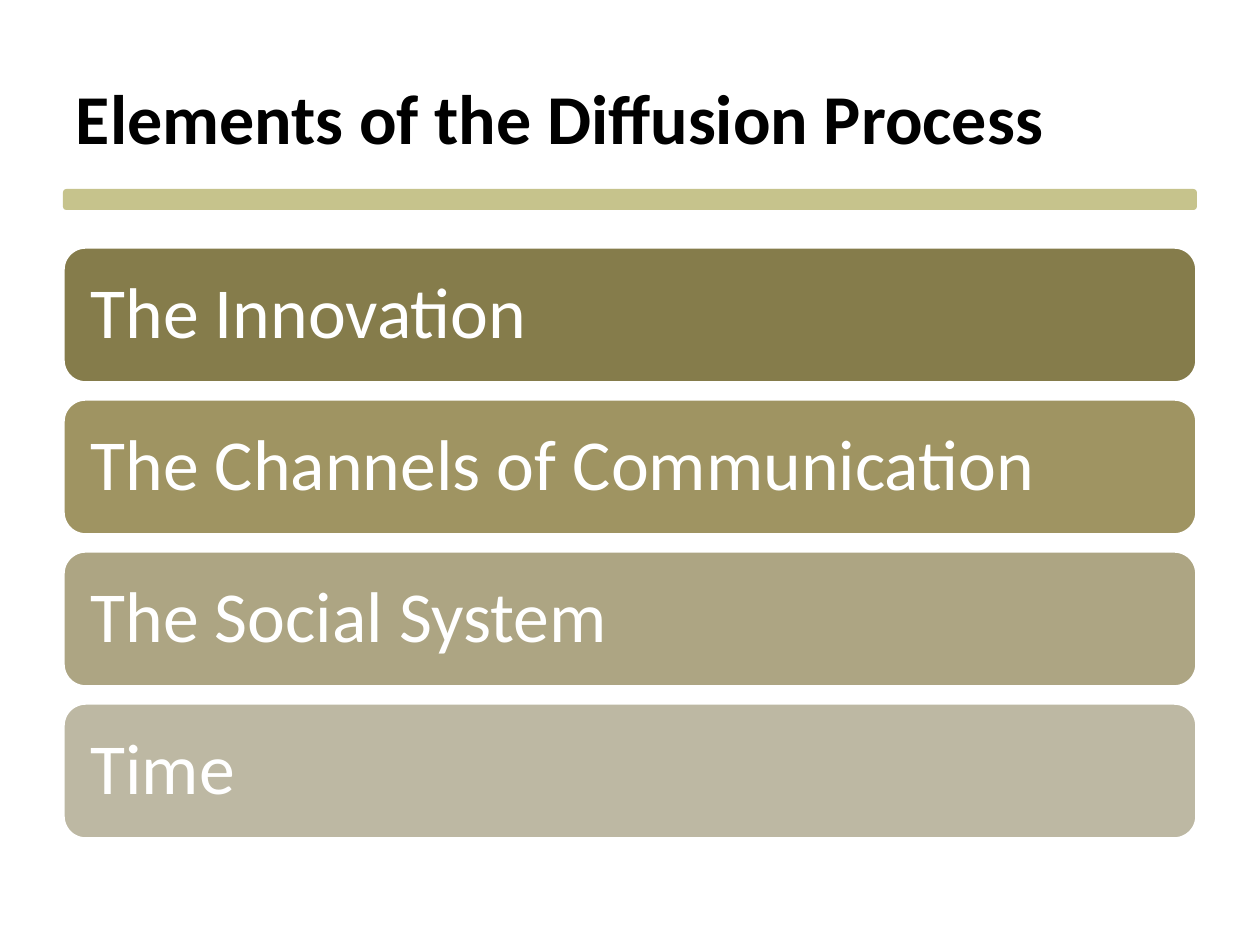
import dataclasses

import pptx
import pptx.dml.color
import pptx.enum.shapes
import pptx.enum.text
import pptx.util

SCALE = 914400 / 126  # EMU per px
FONT = "Calibri"
WHITE = "FFFFFF"
LEFT, WIDTH = 63, 1134
TOP, HEIGHT, PITCH = 247, 136, 152


@dataclasses.dataclass
class Bar:
    text: str
    fill: str


BARS = [
    Bar("The Innovation", "857C4B"),
    Bar("The Channels of Communication", "9F9462"),
    Bar("The Social System", "ADA583"),
    Bar("Time", "BDB8A3"),
]


def px(n: int) -> pptx.util.Emu:
    return pptx.util.Emu(round(n * SCALE))


def color(code: str) -> pptx.dml.color.RGBColor:
    return pptx.dml.color.RGBColor.from_string(code)


def write(shape, text: str, *, size: int, ink: str, bold: bool = False,
          inset: tuple[int, int] = (13, 6), space: float = 1.0) -> None:
    """Set left-aligned, middle-anchored text; inset is (sides, top and bottom)."""
    frame = shape.text_frame
    frame.word_wrap = True
    frame.auto_size = pptx.enum.text.MSO_AUTO_SIZE.NONE
    frame.vertical_anchor = pptx.enum.text.MSO_ANCHOR.MIDDLE
    frame.margin_left = frame.margin_right = px(inset[0])
    frame.margin_top = frame.margin_bottom = px(inset[1])
    para = frame.paragraphs[0]
    para.alignment = pptx.enum.text.PP_ALIGN.LEFT
    para.line_spacing = space
    run = para.add_run()
    run.text = text
    run.font.name = FONT
    run.font.size = pptx.util.Pt(size)
    run.font.bold = bold
    run.font.color.rgb = color(ink)


def add_box(slide, top: int, height: int, fill: str, line: str | None = None):
    kind = pptx.enum.shapes.MSO_SHAPE.ROUNDED_RECTANGLE
    box = slide.shapes.add_shape(kind, px(LEFT), px(top), px(WIDTH), px(height))
    box.shadow.inherit = False
    box.fill.solid()
    box.fill.fore_color.rgb = color(fill)
    if line:
        box.line.color.rgb = color(line)
        box.line.width = pptx.util.Pt(2)
    else:
        box.line.fill.background()
    return box


def add_title(slide, text: str) -> None:
    title = slide.shapes.title
    title.left, title.top = px(LEFT), px(38)
    title.width, title.height = px(WIDTH), px(157)
    write(title, text, size=40, ink="000000", bold=True)


def add_bar(slide, bar: Bar, top: int) -> None:
    box = add_box(slide, top, HEIGHT, bar.fill, WHITE)
    write(box, bar.text, size=41, ink=WHITE, inset=(21, 21), space=0.9)


def main() -> None:
    deck = pptx.Presentation()
    deck.slide_width, deck.slide_height = px(1260), px(945)
    slide = deck.slides.add_slide(deck.slide_layouts[5])
    add_box(slide, 189, 21, "C6C38C")
    add_title(slide, "Elements of the Diffusion Process")
    for i, bar in enumerate(BARS):
        add_bar(slide, bar, TOP + i * PITCH)
    deck.save("out.pptx")


if __name__ == "__main__":
    main()
